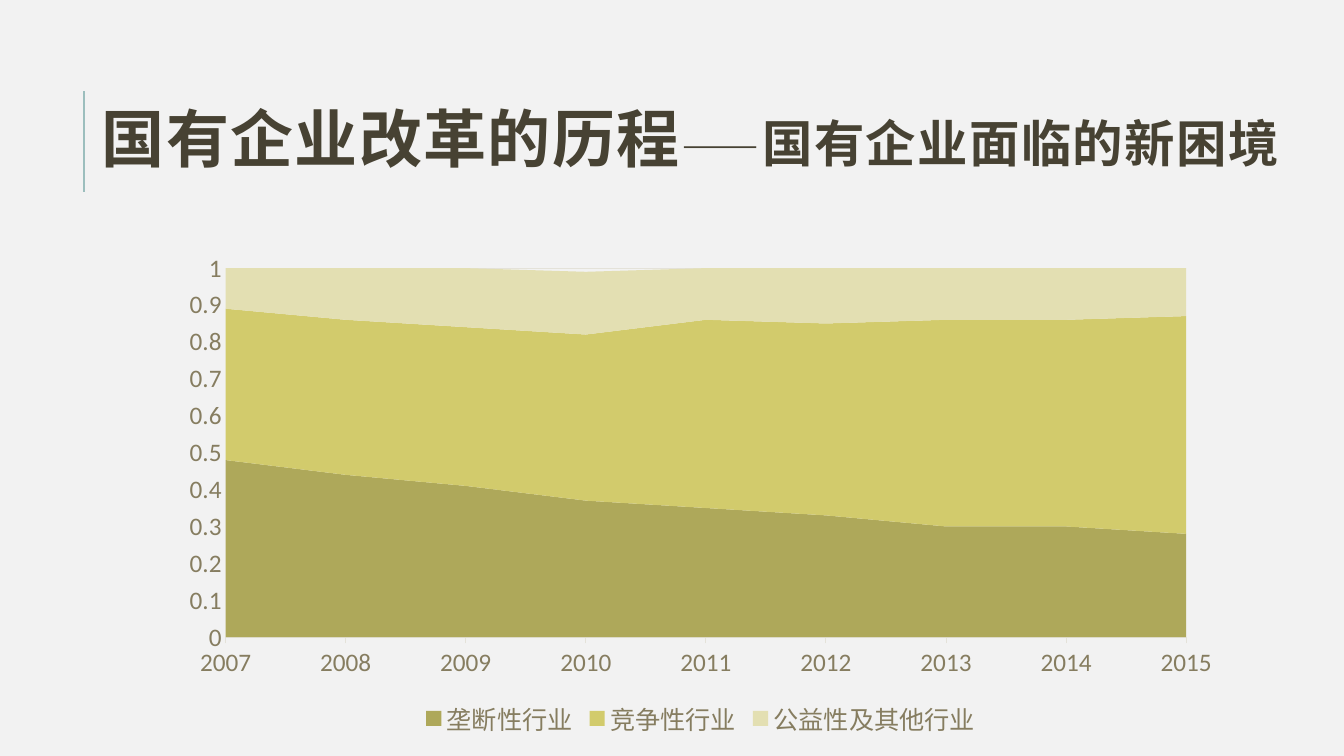
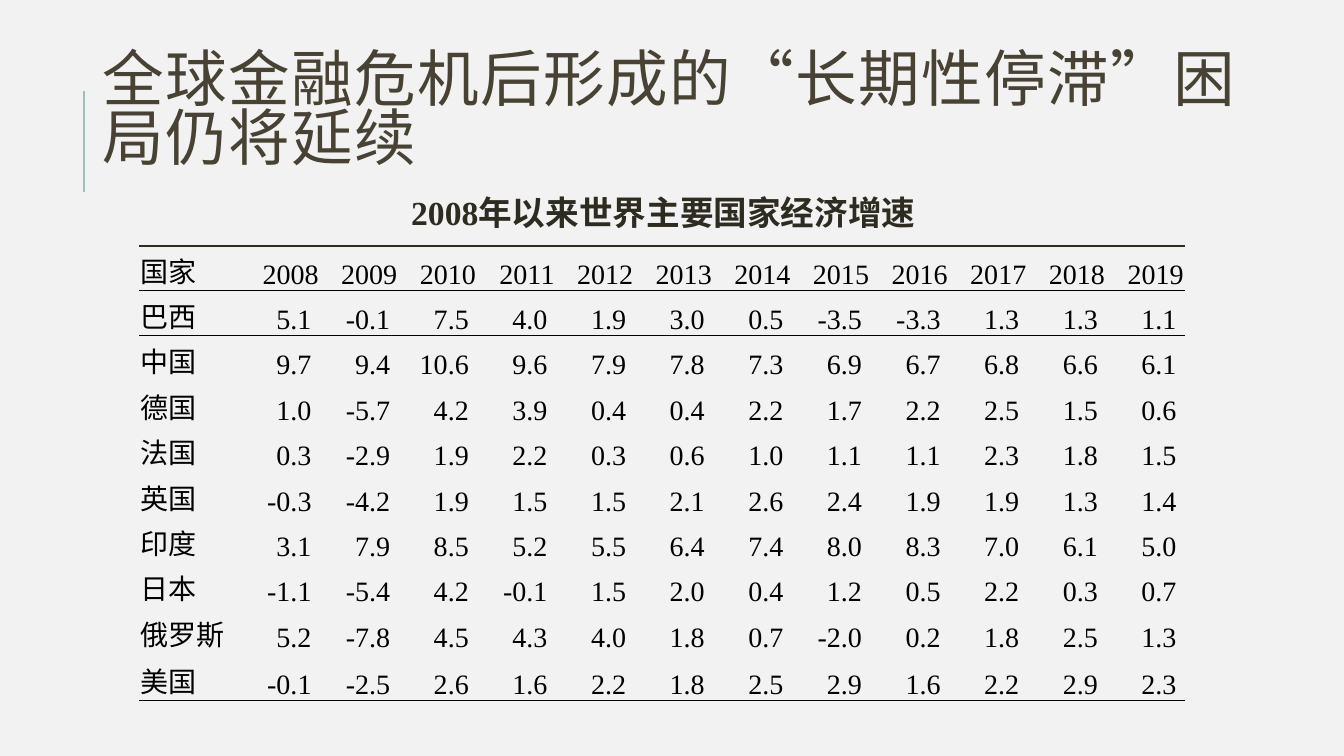
from lxml import etree
from pptx import Presentation
from pptx.chart.data import CategoryChartData
from pptx.dml.color import RGBColor
from pptx.enum import chart as charts, shapes, text
from pptx.oxml import ns
from pptx.util import Inches, Pt

BACKGROUND = RGBColor(0xF2, 0xF2, 0xF2)
ACCENT = RGBColor(0x9C, 0xBE, 0xBD)
TITLE = RGBColor(0x47, 0x42, 0x33)
INK = RGBColor(0x2E, 0x2B, 0x21)
BLACK = RGBColor(0, 0, 0)
AXIS_TEXT = RGBColor(0x86, 0x7D, 0x60)
GRID = RGBColor(0xE4, 0xE2, 0xD9)
SERIES_COLORS = [
    RGBColor(0xAE, 0xA8, 0x5A),
    RGBColor(0xD2, 0xCB, 0x6C),
    RGBColor(0xE3, 0xDF, 0xB2),
]
TITLE_FONT, CHART_FONT, TABLE_FONT = "Cabin", "Calibri", "Times New Roman"
NO_TABLE_STYLE = "{2D5ABB26-0587-4C30-8999-92F81FD0307C}"

INDUSTRY_YEARS = [str(year) for year in range(2007, 2016)]
INDUSTRY_SHARES = {
    "垄断性行业": [0.48, 0.44, 0.41, 0.37, 0.35, 0.33, 0.3, 0.3, 0.28],
    "竞争性行业": [0.41, 0.42, 0.43, 0.45, 0.51, 0.52, 0.56, 0.56, 0.59],
    "公益性及其他行业": [0.11, 0.14, 0.16, 0.17, 0.14, 0.15, 0.14, 0.15, 0.13],
}
GROWTH_HEADER = ["国家"] + [str(year) for year in range(2008, 2020)]
GROWTH_RATES = {
    "巴西": [5.1, -0.1, 7.5, 4.0, 1.9, 3.0, 0.5, -3.5, -3.3, 1.3, 1.3, 1.1],
    "中国": [9.7, 9.4, 10.6, 9.6, 7.9, 7.8, 7.3, 6.9, 6.7, 6.8, 6.6, 6.1],
    "德国": [1.0, -5.7, 4.2, 3.9, 0.4, 0.4, 2.2, 1.7, 2.2, 2.5, 1.5, 0.6],
    "法国": [0.3, -2.9, 1.9, 2.2, 0.3, 0.6, 1.0, 1.1, 1.1, 2.3, 1.8, 1.5],
    "英国": [-0.3, -4.2, 1.9, 1.5, 1.5, 2.1, 2.6, 2.4, 1.9, 1.9, 1.3, 1.4],
    "印度": [3.1, 7.9, 8.5, 5.2, 5.5, 6.4, 7.4, 8.0, 8.3, 7.0, 6.1, 5.0],
    "日本": [-1.1, -5.4, 4.2, -0.1, 1.5, 2.0, 0.4, 1.2, 0.5, 2.2, 0.3, 0.7],
    "俄罗斯": [5.2, -7.8, 4.5, 4.3, 4.0, 1.8, 0.7, -2.0, 0.2, 1.8, 2.5, 1.3],
    "美国": [-0.1, -2.5, 2.6, 1.6, 2.2, 1.8, 2.5, 2.9, 1.6, 2.2, 2.9, 2.3],
}


def style_font(font, name, size, color, bold=False):
    font.name = name
    font.size = Pt(size)
    font.color.rgb = color
    font.bold = bold


def set_border(cell, side, color, width):
    properties = cell._tc.get_or_add_tcPr()
    line = etree.SubElement(properties, ns.qn(f"a:ln{side}"), w=str(Pt(width)))
    fill = etree.SubElement(line, ns.qn("a:solidFill"))
    etree.SubElement(fill, ns.qn("a:srgbClr"), val=str(color))


class Deck:
    def __init__(self):
        self.presentation = Presentation()
        self.presentation.slide_width = Inches(13.33)
        self.presentation.slide_height = Inches(7.5)
        background = self.presentation.slide_master.background.fill
        background.solid()
        background.fore_color.rgb = BACKGROUND
        self.slide = None

    def add_slide(self, title_runs, box, bold=False, line_spacing=1.0):
        layout = self.presentation.slide_layouts.get_by_name("Title Only")
        self.slide = self.presentation.slides.add_slide(layout)
        self.add_title_rule()
        title = self.slide.shapes.title
        title.left, title.top, title.width, title.height = map(Inches, box)
        frame = title.text_frame
        frame.word_wrap = True
        frame.auto_size = text.MSO_AUTO_SIZE.NONE
        frame.vertical_anchor = text.MSO_ANCHOR.MIDDLE
        paragraph = frame.paragraphs[0]
        paragraph.alignment = text.PP_ALIGN.LEFT
        paragraph.line_spacing = line_spacing
        for words, size in title_runs:
            run = paragraph.add_run()
            run.text = words
            style_font(run.font, TITLE_FONT, size, TITLE, bold)
            run._r.get_or_add_rPr().set("spc", "100")

    def add_title_rule(self):
        x = Inches(0.83)
        rule = self.slide.shapes.add_connector(
            shapes.MSO_CONNECTOR.STRAIGHT, x, Inches(1.9), x, Inches(0.9))
        rule.line.color.rgb = ACCENT
        rule.line.width = Pt(1.5)
        etree.SubElement(rule._element.spPr, ns.qn("a:effectLst"))

    def add_caption(self, words, box):
        caption = self.slide.shapes.add_textbox(*map(Inches, box))
        caption.text_frame.word_wrap = True
        paragraph = caption.text_frame.paragraphs[0]
        paragraph.text = words
        style_font(paragraph.font, TABLE_FONT, 24, INK, True)

    def add_area_chart(self, categories, series, box):
        data = CategoryChartData()
        data.categories = categories
        for name, values in series.items():
            data.add_series(name, values)
        chart = self.slide.shapes.add_chart(
            charts.XL_CHART_TYPE.AREA_STACKED, *map(Inches, box), data).chart
        chart.has_title = False
        style_font(chart.font, CHART_FONT, 18, INK)
        plot = chart.plots[0]
        plot.vary_by_categories = False
        for area, color in zip(plot.series, SERIES_COLORS):
            area.format.fill.solid()
            area.format.fill.fore_color.rgb = color
        chart.has_legend = True
        chart.legend.position = charts.XL_LEGEND_POSITION.BOTTOM
        chart.legend.include_in_layout = False
        category_axis, value_axis = chart.category_axis, chart.value_axis
        for target in (chart.legend, category_axis.tick_labels, value_axis.tick_labels):
            style_font(target.font, CHART_FONT, 18, AXIS_TEXT)
        category_axis.has_major_gridlines = False
        category_axis.major_tick_mark = charts.XL_TICK_MARK.OUTSIDE
        value_axis.major_tick_mark = charts.XL_TICK_MARK.NONE
        value_axis.minimum_scale = 0
        value_axis.maximum_scale = 1
        value_axis.major_unit = 0.1
        value_axis.tick_labels.number_format = "General"
        value_axis.tick_labels.number_format_is_linked = False
        value_axis.has_major_gridlines = True
        value_axis.format.line.fill.background()
        for line in (category_axis.format.line, value_axis.major_gridlines.format.line):
            line.color.rgb = GRID
            line.width = Pt(0.75)
        for crossing in chart._chartSpace.iter(ns.qn("c:crossBetween")):
            crossing.set("val", "midCat")

    def add_table(self, rows, box, column_widths, row_heights):
        table = self.slide.shapes.add_table(
            len(rows), len(rows[0]), *map(Inches, box)).table
        table.first_row = table.horz_banding = False
        for style in table._tbl.iter(ns.qn("a:tableStyleId")):
            style.text = NO_TABLE_STYLE
        for column, width in zip(table.columns, column_widths):
            column.width = Inches(width)
        for row, height in zip(table.rows, row_heights):
            row.height = Inches(height)
        for row_index, row in enumerate(rows):
            for column_index, words in enumerate(row):
                cell = table.cell(row_index, column_index)
                is_value = row_index > 0 and column_index > 0
                self.fill_cell(cell, words, column_index > 0, is_value)
                if row_index == 0:
                    set_border(cell, "T", INK, 1)
                    set_border(cell, "B", BLACK, 0.5)
                elif row_index == 1:
                    set_border(cell, "T", BLACK, 0.5)
                elif row_index == len(rows) - 1:
                    set_border(cell, "B", BLACK, 1)
                cell.fill.background()

    def fill_cell(self, cell, words, align_right, is_value):
        cell.margin_left = cell.margin_top = Inches(0.01)
        cell.margin_right = Inches(0.08 if is_value else 0.01)
        cell.margin_bottom = 0
        cell.vertical_anchor = text.MSO_ANCHOR.BOTTOM
        paragraph = cell.text_frame.paragraphs[0]
        paragraph.text = words
        paragraph.alignment = text.PP_ALIGN.RIGHT if align_right else text.PP_ALIGN.LEFT
        style_font(paragraph.font, TABLE_FONT, 20, BLACK)


def main():
    deck = Deck()

    deck.add_slide(
        [("国有企业改革的历程", 45), ("——", 27.9), ("国有企业面临的新困境", 36)],
        (0.91, 0.93, 12.08, 0.86), bold=True)
    deck.add_area_chart(INDUSTRY_YEARS, INDUSTRY_SHARES, (1.67, 2.41, 10.56, 4.95))

    deck.add_slide(
        [("全球金融危机后形成的“长期性停滞”困局仍将延续", 44)],
        (0.92, 0.4, 11.5, 1.45), line_spacing=0.8)
    deck.add_caption("2008年以来世界主要国家经济增速", (3.98, 1.85, 5.37, 0.5))
    growth_rows = [GROWTH_HEADER] + [
        [country] + [f"{rate:.1f}" for rate in rates]
        for country, rates in GROWTH_RATES.items()
    ]
    deck.add_table(
        growth_rows, (1.38, 2.44, 10.38, 4.55),
        [1.01] + [0.78] * 12, [0.44] + [0.45] * 8 + [0.47])

    deck.presentation.save("out.pptx")


if __name__ == "__main__":
    main()
